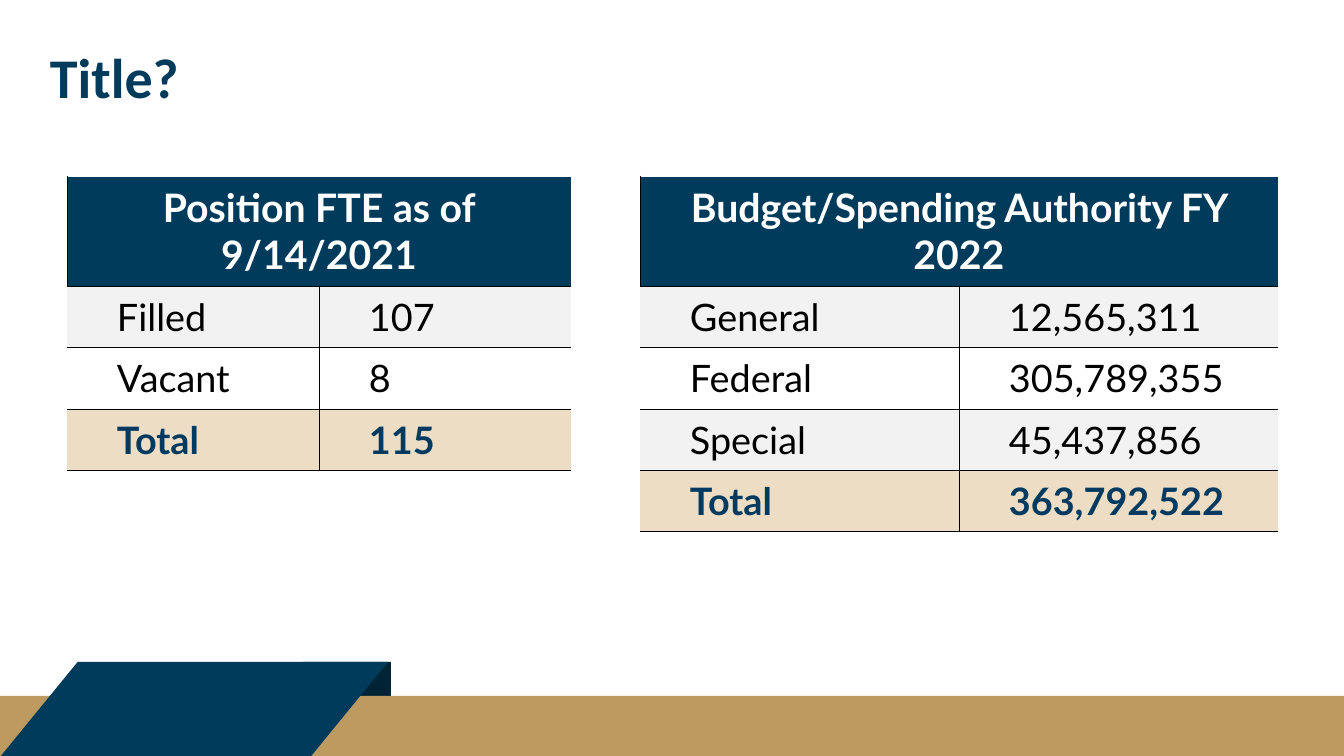
from lxml.etree import SubElement
from pptx import Presentation
from pptx.dml.color import RGBColor
from pptx.enum.shapes import MSO_SHAPE
from pptx.enum.text import MSO_ANCHOR, PP_ALIGN
from pptx.oxml.ns import qn
from pptx.util import Pt

PX = 914400 / 50.4
WIDTH, HEIGHT = 1344, 756

NAVY = RGBColor(0x00, 0x3B, 0x5C)
DEEP = RGBColor(0x00, 0x23, 0x36)
TOTAL = RGBColor(0x00, 0x3A, 0x60)
GOLD = RGBColor(0xBD, 0x9B, 0x60)
SAND = RGBColor(0xCB, 0xA0, 0x58)
GRAY = RGBColor(0xF2, 0xF2, 0xF2)
WHITE = RGBColor(0xFF, 0xFF, 0xFF)
BLACK = RGBColor(0x00, 0x00, 0x00)

TITLE = "Title?"
FOOTER = [
    (MSO_SHAPE.RECTANGLE, (303, 662, 88, 95), DEEP),
    (MSO_SHAPE.RECTANGLE, (0, 696, WIDTH, 60), GOLD),
    (MSO_SHAPE.FLOWCHART_DATA, (0, 662, 388, 95), NAVY),
]
# left edge, column width, heading, rows; the last row is the total
TABLES = [
    (67, 252, "Position FTE as of 9/14/2021",
     [("Filled", "107"), ("Vacant", "8"), ("Total", "115")]),
    (640, 319, "Budget/Spending Authority FY 2022",
     [("General", "12,565,311"), ("Federal", "305,789,355"),
      ("Special", "45,437,856"), ("Total", "363,792,522")]),
]
TABLE_TOP, HEAD_H, ROW_H = 176, 88, 60
PAD_X, PAD_Y, INDENT = 19, 8, 50

HEAD_EDGES = {"L": BLACK, "T": WHITE, "B": BLACK}
LEFT_EDGES = {"T": BLACK, "R": BLACK, "B": BLACK}
RIGHT_EDGES = {"L": BLACK, "T": BLACK, "B": BLACK}


def emu(*lengths):
    return [round(length * PX) for length in lengths]


def add_text(frame, text, font, size, color, bold):
    para = frame.paragraphs[0]
    run = para.add_run()
    run.text = text
    run.font.name = font
    run.font.size = Pt(size)
    run.font.color.rgb = color
    run.font.bold = bold
    return para


def set_edges(cell, edges):
    """Draw the given sides at 1 pt and clear the others."""
    props = cell._tc.get_or_add_tcPr()
    for index, side in enumerate("LRTB"):
        line = SubElement(props, qn(f"a:ln{side}"), w=str(Pt(1)))
        if side in edges:
            fill = SubElement(line, qn("a:solidFill"))
            SubElement(fill, qn("a:srgbClr"), val=str(edges[side]))
        else:
            SubElement(line, qn("a:noFill"))
        props.insert(index, line)


def style_cell(cell, fill, edges, left=INDENT):
    cell.fill.solid()
    cell.fill.fore_color.rgb = fill
    if fill == SAND:
        color = cell._tc.tcPr.find(".//" + qn("a:srgbClr"))
        SubElement(color, qn("a:alpha"), val="35000")
    cell.vertical_anchor = MSO_ANCHOR.MIDDLE
    cell.margin_left, cell.margin_right = emu(left, PAD_X)
    cell.margin_top, cell.margin_bottom = emu(PAD_Y, PAD_Y)
    set_edges(cell, edges)


def add_budget(slide, left, col_w, heading, rows):
    height = HEAD_H + ROW_H * len(rows)
    table = slide.shapes.add_table(
        len(rows) + 1, 2, *emu(left, TABLE_TOP, 2 * col_w, height)).table
    table.first_row = table.horz_banding = False
    for column in table.columns:
        column.width = emu(col_w)[0]
    for index, row in enumerate(table.rows):
        row.height = emu(ROW_H if index else HEAD_H)[0]

    head = table.cell(0, 0)
    head.merge(table.cell(0, 1))
    style_cell(head, NAVY, HEAD_EDGES, PAD_X)
    para = add_text(head.text_frame, heading, "Lato", 56, WHITE, True)
    para.alignment = PP_ALIGN.CENTER

    for r, values in enumerate(rows, 1):
        last = r == len(rows)
        fill = SAND if last else GRAY if r % 2 else WHITE
        color = TOTAL if last else BLACK
        for c, text in enumerate(values):
            cell = table.cell(r, c)
            style_cell(cell, fill, RIGHT_EDGES if c else LEFT_EDGES)
            add_text(cell.text_frame, text, "Lato", 54, color, last)


def main():
    deck = Presentation()
    deck.slide_width, deck.slide_height = emu(WIDTH, HEIGHT)
    slide = deck.slides.add_slide(deck.slide_layouts[6])

    for kind, box, color in FOOTER:
        shape = slide.shapes.add_shape(kind, *emu(*box))
        shape.shadow.inherit = False
        shape.fill.solid()
        shape.fill.fore_color.rgb = color
        shape.line.fill.background()

    frame = slide.shapes.add_textbox(*emu(50, 50, 1250, 76)).text_frame
    frame.word_wrap = True
    frame.margin_left = frame.margin_right = 0
    frame.margin_top = frame.margin_bottom = 0
    add_text(frame, TITLE, "Calibri", 80, NAVY, True).line_spacing = 0.9

    for spec_row in TABLES:
        add_budget(slide, *spec_row)
    deck.save("out.pptx")


if __name__ == "__main__":
    main()
